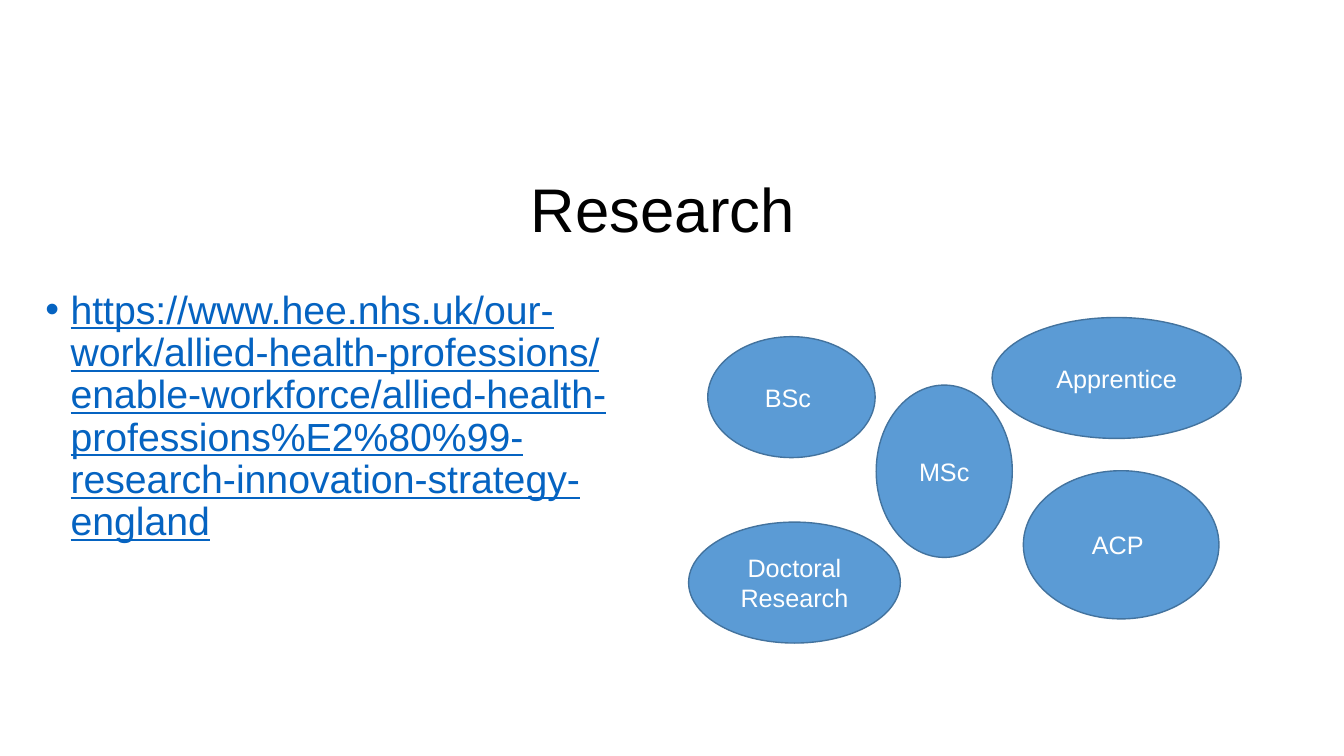
from lxml import etree
from pptx import Presentation
from pptx.dml.color import RGBColor
from pptx.enum.shapes import MSO_SHAPE as Shape
from pptx.enum.text import MSO_ANCHOR as Anchor, MSO_AUTO_SIZE as AutoSize, PP_ALIGN as Align
from pptx.oxml.ns import qn
from pptx.util import Inches, Pt

BLACK = RGBColor(0x00, 0x00, 0x00)
WHITE = RGBColor(0xFF, 0xFF, 0xFF)
LINK_BLUE = RGBColor(0x05, 0x63, 0xC1)
OVAL_FILL = RGBColor(0x5B, 0x9B, 0xD5)
OVAL_LINE = RGBColor(0x43, 0x73, 0x9E)

STRATEGY_LINK = (
    "https://www.hee.nhs.uk/our-work/allied-health-professions/"
    "enable-workforce/allied-health-professions%E2%80%99-"
    "research-innovation-strategy-england"
)

# Text, left, top, width, height
OVALS = [
    ("BSc ", 7.02, 3.34, 1.66, 1.2),
    ("Apprentice", 9.84, 3.15, 2.47, 1.2),
    ("Doctoral Research", 6.83, 5.18, 2.1, 1.2),
    ("ACP ", 10.15, 4.67, 1.94, 1.47),
    ("MSc", 8.69, 3.82, 1.35, 1.71),
]


def style_font(para, size, color):
    para.font.name = "Arial"
    para.font.size = Pt(size)
    para.font.color.rgb = color


def fill_placeholder(box, text, left, top, width, height, anchor):
    box.left, box.top = Inches(left), Inches(top)
    box.width, box.height = Inches(width), Inches(height)
    frame = box.text_frame
    frame.text = text
    frame.word_wrap = True
    frame.auto_size = AutoSize.NONE
    frame.vertical_anchor = anchor
    para = frame.paragraphs[0]
    para.line_spacing = 0.9
    para.space_before = Pt(0)
    return para


def add_bullet(para, indent):
    props = para._p.get_or_add_pPr()
    props.set("marL", str(Inches(indent)))
    props.set("indent", str(-Inches(indent)))
    etree.SubElement(props, qn("a:buFont")).set("typeface", "Arial")
    etree.SubElement(props, qn("a:buChar")).set("char", "•")


def add_oval(page, text, left, top, width, height):
    oval = page.shapes.add_shape(
        Shape.OVAL, Inches(left), Inches(top), Inches(width), Inches(height))
    oval.shadow.inherit = False
    oval.fill.solid()
    oval.fill.fore_color.rgb = OVAL_FILL
    oval.line.color.rgb = OVAL_LINE
    oval.line.width = Pt(1)
    frame = oval.text_frame
    frame.text = text
    frame.word_wrap = True
    frame.vertical_anchor = Anchor.MIDDLE
    para = frame.paragraphs[0]
    para.alignment = Align.CENTER
    style_font(para, 18, WHITE)


def main():
    deck = Presentation()
    deck.slide_width, deck.slide_height = Inches(13.33), Inches(7.5)
    page = deck.slides.add_slide(deck.slide_layouts[1])

    # Title
    title = fill_placeholder(
        page.shapes.title, "Research ", 0.35, 1.66, 12.62, 0.9, Anchor.MIDDLE)
    title.alignment = Align.CENTER
    style_font(title, 44, BLACK)

    # Strategy address
    link = fill_placeholder(
        page.placeholders[1], STRATEGY_LINK, 0.35, 2.83, 6.24, 3.93, Anchor.TOP)
    add_bullet(link, 0.25)
    style_font(link, 28, LINK_BLUE)
    link.font.underline = True

    # Routes into research
    for oval in OVALS:
        add_oval(page, *oval)

    deck.save("out.pptx")


if __name__ == "__main__":
    main()
